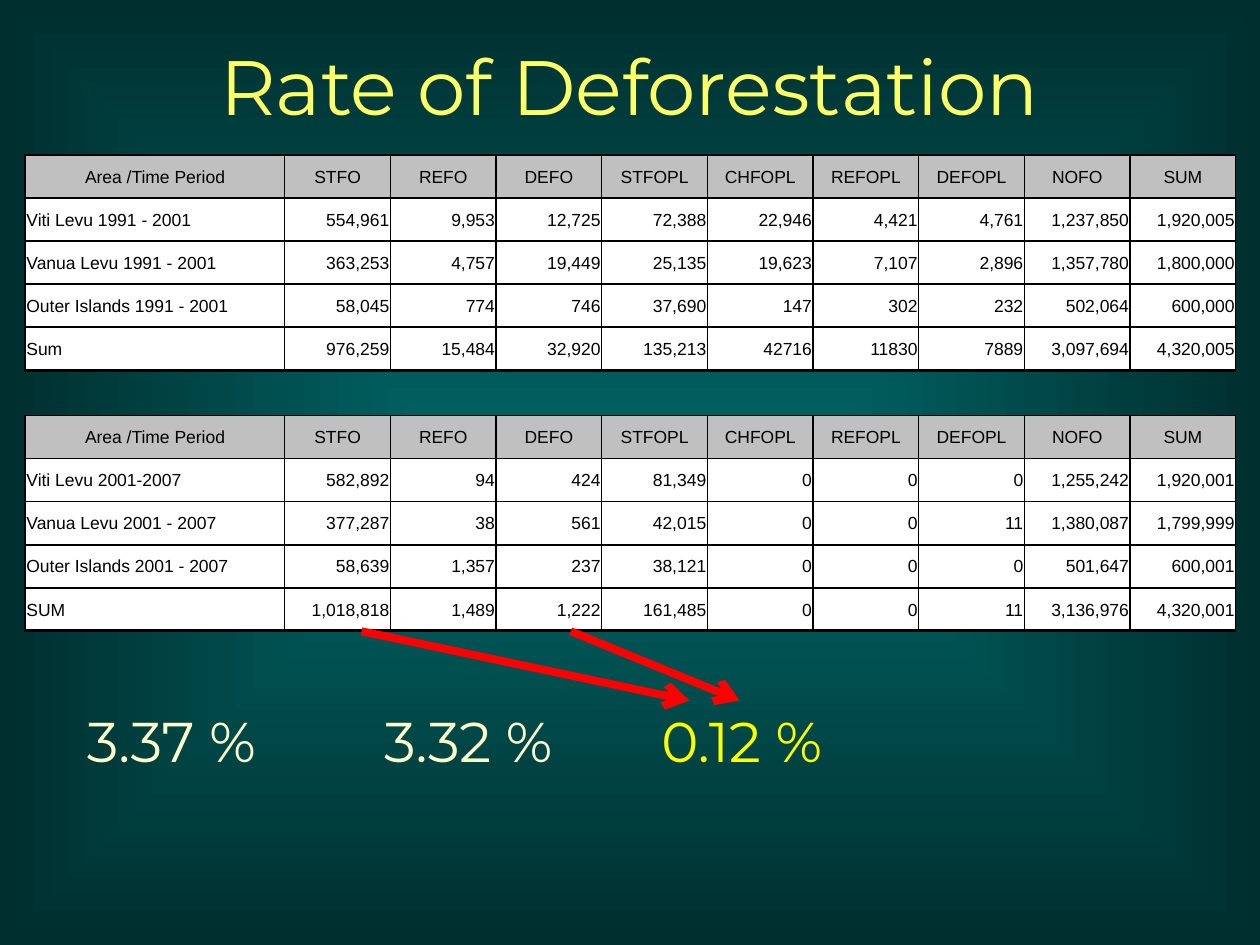
"""Builds the deforestation rate slide with its table, arrows and percentages."""
from pptx import Presentation, util as u
from pptx.dml.color import RGBColor
from pptx.enum import shapes, text
from pptx.oxml import parse_xml
from pptx.oxml.ns import nsdecls, qn
from pptx.oxml.xmlchemy import OxmlElement

TEAL = RGBColor(0x00, 0x66, 0x66)
DARK_TEAL = RGBColor(0x00, 0x2F, 0x2F)
TITLE_YELLOW = RGBColor(0xFF, 0xFF, 0x66)
CREAM = RGBColor(0xFF, 0xFF, 0xCC)
YELLOW = RGBColor(0xFF, 0xFF, 0x00)
RED = RGBColor(0xFF, 0x00, 0x00)
GREY = RGBColor(0xC0, 0xC0, 0xC0)
WHITE = RGBColor(0xFF, 0xFF, 0xFF)
BLACK = RGBColor(0x00, 0x00, 0x00)

HEADER = ["Area /Time Period", "STFO", "REFO", "DEFO", "STFOPL",
          "CHFOPL", "REFOPL", "DEFOPL", "NOFO", "SUM"]
FIRST_PERIOD = [
    ["Viti Levu 1991 - 2001", "554,961", "9,953", "12,725", "72,388",
     "22,946", "4,421", "4,761", "1,237,850", "1,920,005"],
    ["Vanua Levu 1991 - 2001", "363,253", "4,757", "19,449", "25,135",
     "19,623", "7,107", "2,896", "1,357,780", "1,800,000"],
    ["Outer Islands 1991 - 2001", "58,045", "774", "746", "37,690",
     "147", "302", "232", "502,064", "600,000"],
    ["Sum", "976,259", "15,484", "32,920", "135,213",
     "42716", "11830", "7889", "3,097,694", "4,320,005"],
]
SECOND_PERIOD = [
    ["Viti Levu 2001-2007", "582,892", "94", "424", "81,349",
     "0", "0", "0", "1,255,242", "1,920,001"],
    ["Vanua Levu 2001 - 2007", "377,287", "38", "561", "42,015",
     "0", "0", "11", "1,380,087", "1,799,999"],
    ["Outer Islands 2001 - 2007", "58,639", "1,357", "237", "38,121",
     "0", "0", "0", "501,647", "600,001"],
    ["SUM", "1,018,818", "1,489", "1,222", "161,485",
     "0", "0", "11", "3,136,976", "4,320,001"],
]
GAP_ROW = len(FIRST_PERIOD) + 1
ROWS = [HEADER, *FIRST_PERIOD, [""] * len(HEADER), HEADER, *SECOND_PERIOD]
SUM_ROWS = (GAP_ROW - 1, len(ROWS) - 1)


class SlideBuilder:
    """Holds the text styles and the current slide."""

    title_style = {"name": "Montserrat", "size": u.Pt(44)}
    rate_style = {"name": "Montserrat", "size": u.Pt(32)}
    cell_style = {"name": "Arial", "size": u.Pt(10)}
    cell_format = {"margin_left": u.Inches(0.01), "margin_top": u.Inches(0.01),
                   "margin_right": u.Inches(0.01), "margin_bottom": 0,
                   "vertical_anchor": text.MSO_ANCHOR.MIDDLE}

    def __init__(self, deck):
        self.page = deck.slides.add_slide(deck.slide_layouts[5])

    def background(self, center, edge):
        fill = self.page.background.fill
        fill.gradient()
        for stop, color, position in zip(fill.gradient_stops, (center, edge), (0, 1)):
            stop.color.rgb = color
            stop.position = position
        gradient = next(self.page.element.iter(qn("a:gradFill")))
        gradient.replace(gradient.find(qn("a:lin")), parse_xml(
            f'<a:path {nsdecls("a")} path="shape">'
            '<a:fillToRect l="50000" t="50000" r="50000" b="50000"/></a:path>'))

    def add_text(self, para, wording, style, color, align):
        para.alignment = align
        span = para.add_run()
        span.text = wording
        for key, value in style.items():
            setattr(span.font, key, value)
        span.font.color.rgb = color

    def title(self, wording, left, top, width, height):
        box = self.page.shapes.title
        place = {"left": left, "top": top, "width": width, "height": height}
        for key, value in place.items():
            setattr(box, key, u.Inches(value))
        box.text_frame.auto_size = text.MSO_AUTO_SIZE.NONE
        box.text_frame.vertical_anchor = text.MSO_ANCHOR.MIDDLE
        self.add_text(box.text_frame.paragraphs[0], wording, self.title_style,
                      TITLE_YELLOW, text.PP_ALIGN.CENTER)

    def rate(self, wording, left, color):
        box = self.page.shapes.add_textbox(
            u.Inches(left), u.Inches(5.56), u.Inches(1.85), u.Inches(0.64))
        box.text_frame.word_wrap = False
        box.text_frame.auto_size = text.MSO_AUTO_SIZE.SHAPE_TO_FIT_TEXT
        self.add_text(box.text_frame.paragraphs[0], wording, self.rate_style,
                      color, text.PP_ALIGN.LEFT)

    def arrow(self, start, end):
        line = self.page.shapes.add_connector(
            shapes.MSO_CONNECTOR.STRAIGHT, *map(u.Inches, start + end))
        line.line.color.rgb = RED
        line.line.width = u.Pt(4.5)
        line.line._get_or_add_ln().append(
            parse_xml(f'<a:tailEnd {nsdecls("a")} type="arrow"/>'))
        line._element.spPr.append(OxmlElement("a:effectLst"))

    def borders(self, cell, widths):
        for side, points in widths.items():
            paint = (f'<a:solidFill><a:srgbClr val="{BLACK}"/></a:solidFill>'
                     if points else "<a:noFill/>")
            cell._tc.get_or_add_tcPr().append(parse_xml(
                f'<a:ln{side} {nsdecls("a")} w="{u.Pt(points)}">{paint}</a:ln{side}>'))

    def cell(self, cell, wording, row, column):
        for key, value in self.cell_format.items():
            setattr(cell, key, value)
        side = 0 if row == GAP_ROW else 1
        self.borders(cell, {"L": side, "R": side,
                            "T": 2 if row == GAP_ROW else 1,
                            "B": 2 if row in SUM_ROWS else 1})
        if row == GAP_ROW:
            cell.fill.background()
            return
        is_header = ROWS[row] is HEADER
        cell.fill.solid()
        cell.fill.fore_color.rgb = GREY if is_header else WHITE
        align = (text.PP_ALIGN.CENTER if is_header else
                 text.PP_ALIGN.RIGHT if column else text.PP_ALIGN.LEFT)
        self.add_text(cell.text_frame.paragraphs[0], wording, self.cell_style, BLACK, align)

    def table(self, left, top, width, height, label_width, gap_height):
        grid = self.page.shapes.add_table(
            len(ROWS), len(HEADER), *map(u.Inches, (left, top, width, height))).table
        grid.first_row = grid.horz_banding = False
        value_width = (width - label_width) / (len(HEADER) - 1)
        row_height = (height - gap_height) / (len(ROWS) - 1)
        for index, column in enumerate(grid.columns):
            column.width = u.Inches(value_width if index else label_width)
        for index, row in enumerate(grid.rows):
            row.height = u.Inches(gap_height if index == GAP_ROW else row_height)
            for position, wording in enumerate(ROWS[index]):
                self.cell(grid.cell(index, position), wording, index, position)


def main():
    deck = Presentation()
    deck.slide_width, deck.slide_height = u.Inches(10), u.Inches(7.5)
    builder = SlideBuilder(deck)
    builder.background(TEAL, DARK_TEAL)
    builder.title("Rate of Deforestation", 0.5, 0.05, 9, 1.25)
    builder.table(0.2, 1.23, 9.61, 3.78, label_width=2.06, gap_height=0.36)
    builder.rate("3.37 %", 0.59, CREAM)
    builder.rate("3.32 %", 2.95, CREAM)
    builder.arrow((2.87, 5.01), (5.47, 5.56))
    builder.arrow((4.53, 5.01), (5.87, 5.56))
    builder.rate("0.12 %", 5.15, YELLOW)
    deck.save("out.pptx")


if __name__ == "__main__":
    main()
